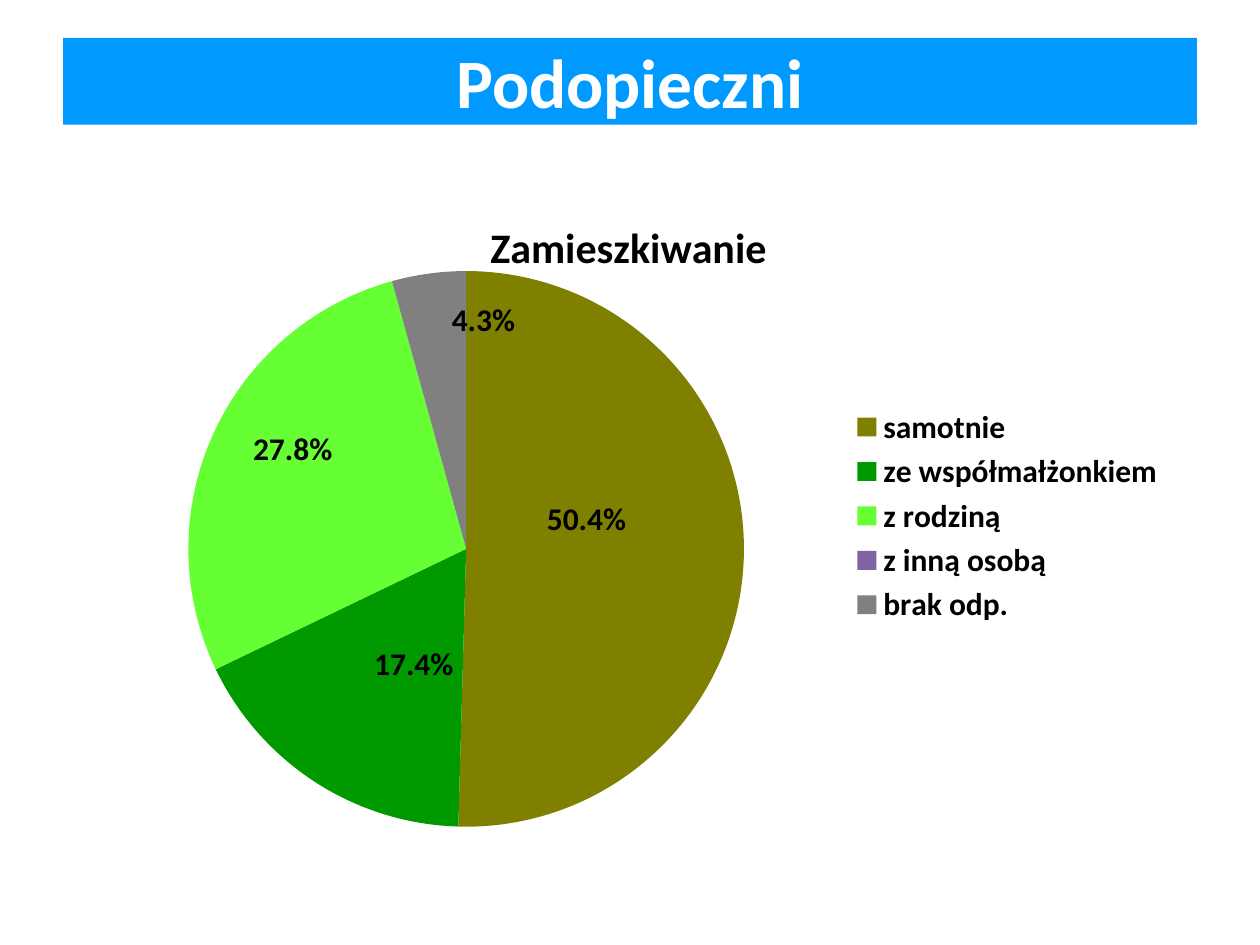
from dataclasses import dataclass

from lxml import etree
from pptx import Presentation
from pptx.chart.data import CategoryChartData
from pptx.dml.color import RGBColor
from pptx.enum.chart import XL_CHART_TYPE, XL_LABEL_POSITION, XL_LEGEND_POSITION
from pptx.enum.text import MSO_ANCHOR, PP_ALIGN
from pptx.oxml.ns import qn
from pptx.util import Inches, Pt

PIE = XL_CHART_TYPE.PIE
INSIDE_END = XL_LABEL_POSITION.INSIDE_END
RIGHT = XL_LEGEND_POSITION.RIGHT
CENTER = PP_ALIGN.CENTER
MIDDLE = MSO_ANCHOR.MIDDLE


@dataclass(frozen=True)
class Theme:
    font: str = "Calibri"
    banner: str = "0099FF"
    light: str = "FFFFFF"
    dark: str = "000000"
    title_size: float = 39.6
    chart_title_size: float = 24
    label_size: float = 18
    slices: tuple = ("808000", "009900", "66FF33", "8064A2", "808080")


theme = Theme()


def write_text(tf, text, size, color, bold=True):
    p = tf.paragraphs[0]
    p.alignment = CENTER
    r = p.add_run()
    r.text = text
    r.font.name = theme.font
    r.font.size = Pt(size)
    r.font.bold = bold
    r.font.color.rgb = RGBColor.from_string(color)


def set_layout(element, index, **settings):
    for old in element.findall(qn("c:layout")):
        element.remove(old)
    layout = etree.Element(qn("c:layout"))
    manual = etree.SubElement(layout, qn("c:manualLayout"))
    for name, value in settings.items():
        etree.SubElement(manual, qn(f"c:{name}")).set("val", str(value))
    element.insert(index, layout)


prs = Presentation()
prs.slide_width = Inches(10)
prs.slide_height = Inches(7.5)
slide = prs.slides.add_slide(prs.slide_layouts[5])

title = slide.shapes.title
title.left, title.top = Inches(0.5), Inches(0.3)
title.width, title.height = Inches(9), Inches(0.69)
title.fill.solid()
title.fill.fore_color.rgb = RGBColor.from_string(theme.banner)
title.text_frame.vertical_anchor = MIDDLE
write_text(title.text_frame, "Podopieczni", theme.title_size, theme.light)

data = CategoryChartData(number_format="0.0%")
data.categories = ["samotnie", "ze współmałżonkiem", "z rodziną", "z inną osobą", "brak odp."]
data.add_series("Series 1", [0.504, 0.174, 0.278, 0, 0.043])
chart = slide.shapes.add_chart(
    PIE, Inches(0.59), Inches(1.47), Inches(8.76), Inches(5.25), data
).chart

chart.font.name = theme.font
chart.font.size = Pt(theme.label_size)
chart.font.bold = True
chart.font.color.rgb = RGBColor.from_string(theme.dark)

chart.has_title = True
write_text(chart.chart_title.text_frame, "Zamieszkiwanie", theme.chart_title_size, theme.dark)
set_layout(chart.chart_title._element, 1, xMode="edge", yMode="edge", x=0.37, y=0.04)

chart.has_legend = True
chart.legend.position = RIGHT
chart.legend.include_in_layout = False

plot = chart.plots[0]
plot.vary_by_categories = True
plot_area = chart._chartSpace.chart.plotArea
set_layout(plot_area, 0, layoutTarget="inner", xMode="edge", yMode="edge",
           x=0.02, y=0.13, w=0.67, h=0.84)

series = plot.series[0]
series.data_labels.show_value = False
for i, color in enumerate(theme.slices):
    fill = series.points[i].format.fill
    fill.solid()
    fill.fore_color.rgb = RGBColor.from_string(color)

label_offsets = {0: (-0.1, -0.05), 1: (0.05, -0.14), 2: (0.03, -0.01), 4: (0.02, 0.03)}
for i, (x, y) in label_offsets.items():
    label = series.points[i].data_label
    label.position = INSIDE_END
    label.font.size = Pt(theme.label_size)
    label.font.bold = True
    for element in series.data_labels._element.findall(qn("c:dLbl")):
        if element.find(qn("c:idx")).get("val") == str(i):
            set_layout(element, 1, x=x, y=y)

prs.save("out.pptx")
